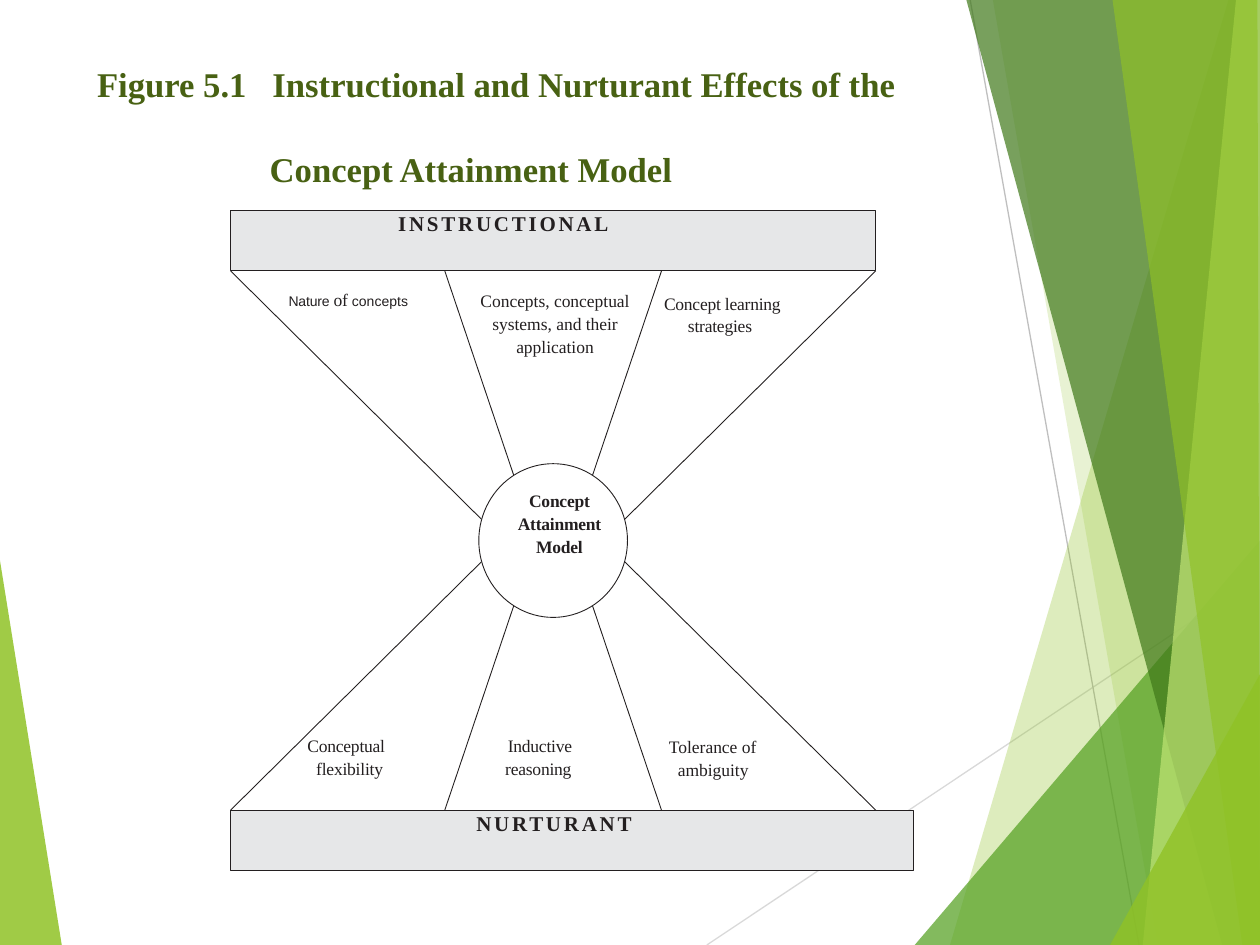
import pptx
import pptx.util
import pptx.dml.color
import pptx.enum.shapes
import pptx.enum.text
import pptx.oxml.ns
from lxml import etree

Inches, Pt = pptx.util.Inches, pptx.util.Pt
SHAPE = pptx.enum.shapes.MSO_SHAPE
ALIGN = pptx.enum.text.PP_ALIGN
qn = pptx.oxml.ns.qn
INK, SERIF = "231F20", "Times New Roman"


def paint(target, color, alpha=100):
    """Colour a fill or line fill, with opacity in percent."""
    target.solid()
    target.fore_color.rgb = pptx.dml.color.RGBColor.from_string(color)
    if alpha < 100:
        node = target._xPr.find(qn("a:solidFill"))[0]
        etree.SubElement(node, qn("a:alpha")).set("val", str(alpha * 1000))


def style(run, size, font=SERIF, color=INK, bold=False, space=0):
    run.font.size, run.font.name, run.font.bold = Pt(size), font, bold
    paint(run.font.fill, color)
    if space:
        run._r.get_or_add_rPr().set("spc", str(round(space * 100)))


def indent(para, left, first=0):
    props = para._p.get_or_add_pPr()
    props.set("marL", str(Inches(left)))
    props.set("indent", str(Inches(first)))


def inset(frame):
    frame.margin_left = frame.margin_right = 0
    frame.margin_top = frame.margin_bottom = 0
    frame.vertical_anchor = pptx.enum.text.MSO_ANCHOR.TOP
    frame.word_wrap = True


def line(shapes, x1, y1, x2, y2, color, width):
    link = shapes.add_connector(pptx.enum.shapes.MSO_CONNECTOR.STRAIGHT,
                                Inches(x1), Inches(y1), Inches(x2), Inches(y2))
    paint(link.line.fill, color)
    link.line.width = Pt(width)
    etree.SubElement(link.element.spPr, qn("a:effectLst"))


def facet(shapes, points, color, alpha):
    spots = [(Inches(x), Inches(y)) for x, y in points]
    path = shapes.build_freeform(*spots[0])
    path.add_line_segments(spots[1:])
    shape = path.convert_to_shape()
    shape.shadow.inherit = False
    paint(shape.fill, color, alpha)
    shape.line.fill.background()


def decor(shapes, wide, high):
    """Translucent facets along the left and right edges."""
    facet(shapes, [(0, 4.45), (0.49, high), (0, high)], "90C226", 85)
    line(shapes, 5.61, high, wide, 4.57, "D9D9D9", 0.75)
    line(shapes, 7.7, 0, 9.04, high, "BFBFBF", 0.75)
    # Bands: top left, bottom left, top right, colour, opacity
    bands = [(9.75, 7.54, wide, "90C226", 30),
             (7.88, 9.19, wide, "90C226", 20),
             (None, 7.26, 4.29, "54A021", 72),
             (7.67, 9.7, wide, "3F7819", 70),
             (9.81, 9.07, wide, "C0E474", 70),
             (8.83, 9.86, 9.98, "90C226", 65),
             (None, 8.81, 5.35, "90C226", 80)]
    for top, foot, right, color, alpha in bands:
        if top is None:  # corner triangle; right is its height on the edge
            points = [(foot, high), (wide, right), (wide, high)]
        else:
            points = [(top, 0), (foot, high), (wide, high), (right, 0)]
        facet(shapes, points, color, alpha)


def heading(title, x, y, w, h):
    title.left, title.top, title.width, title.height = map(Inches, (x, y, w, h))
    frame = title.text_frame
    frame.text = ("Figure 5.1   Instructional and Nurturant Effects of the\n"
                  "Concept Attainment Model")
    inset(frame)
    frame.auto_size = pptx.enum.text.MSO_AUTO_SIZE.NONE
    frame.margin_left, frame.margin_top = Inches(0.1), Inches(0.08)
    for para in frame.paragraphs:
        para.alignment = ALIGN.LEFT
        style(para.runs[0], 19.8, color="486113", bold=True)
    para.space_before = Pt(24.6)
    indent(para, 1.37)


def bar(shapes, x, y, w, h, text, lead):
    box = shapes.add_shape(SHAPE.RECTANGLE, *map(Inches, (x, y, w, h)))
    box.shadow.inherit = False
    paint(box.fill, "E6E7E8")
    paint(box.line.fill, INK)
    box.line.width = Pt(0.5)
    inset(box.text_frame)
    para = box.text_frame.paragraphs[0]
    para.text = text
    para.alignment = ALIGN.LEFT
    indent(para, lead)
    style(para.runs[0], 12, bold=True, space=1.6)


def label(shapes, x, y, w, h, text, hang=None, bold=False, space=-0.1):
    """Text centred, or left-set when a (left, first) indent is given."""
    box = shapes.add_textbox(*map(Inches, (x, y, w, h)))
    inset(box.text_frame)
    box.text_frame.text = text
    for para in box.text_frame.paragraphs:
        para.line_spacing = 1.08
        para.alignment = ALIGN.LEFT if hang else ALIGN.CENTER
        if hang:
            indent(para, *hang)
        style(para.runs[0], 10, bold=bold, space=space)
    return para


def diagram(shapes, x, y, w, h):
    """Hourglass of effects around a central hub."""
    deep = 0.48
    mid, half = x + w / 2, y + h / 2
    reach = h / 2 - deep
    # Spokes, mirrored in both directions
    for far, near, rise in [(w / 2, 0.57, 0.17), (0.86, 0.31, 0.51)]:
        for across in (-1, 1):
            for down in (-1, 1):
                line(shapes, mid + across * far, half + down * reach,
                     mid + across * near, half + down * rise, INK, 0.5)
    # Hub
    hub = shapes.add_shape(SHAPE.OVAL, Inches(mid - 0.59), Inches(half - 0.61),
                           Inches(1.18), Inches(1.22))
    hub.shadow.inherit = False
    paint(hub.fill, "FFFFFF")
    paint(hub.line.fill, INK)
    hub.line.width = Pt(0.5)
    label(shapes, x + 2.08, y + 2.21, 1.06, 0.84, "Concept Attainment Model",
          bold=True)
    # Instructional effects
    para = label(shapes, x + 0.46, y + 0.62, 1.19, 0.16, "Nature ", (0, 0))
    para.line_spacing = 1
    style(para.runs[0], 8, "Arial")
    for text, size, font in [("of", 10, SERIF), (" concepts", 8, "Arial")]:
        run = para.add_run()
        run.text = text
        style(run, size, font)
    label(shapes, x + 1.87, y + 0.62, 1.41, 0.99,
          "Concepts, conceptual systems, and their\napplication", space=0)
    label(shapes, x + 3.44, y + 0.64, 1.32, 0.78,
          "Concept learning strategies", (0.19, -0.19))
    # Nurturant effects
    label(shapes, x + 0.61, y + 4.15, 1.07, 0.45,
          "Conceptual flexibility", (0.07, -0.07))
    label(shapes, x + 2.18, y + 4.15, 0.92, 0.48,
          "Inductive reasoning", (0, 0.02))
    label(shapes, x + 3.48, y + 4.16, 1, 0.41,
          "Tolerance of ambiguity", (0.07, -0.07), space=0)
    # Bars
    bar(shapes, x, y + h - deep, w + 0.3, deep, "NURTURANT", 1.95)
    bar(shapes, x, y, w, deep, "INSTRUCTIONAL", 1.33)


def main():
    deck = pptx.Presentation()
    deck.slide_width, deck.slide_height = Inches(10), Inches(7.5)
    slide = deck.slides.add_slide(deck.slide_layouts[5])
    decor(slide.shapes, 10, 7.5)
    heading(slide.shapes.title, 0.67, 0.42, 6.94, 0.67)
    diagram(slide.shapes, 1.83, 1.67, 5.12, 5.24)
    deck.save("out.pptx")


if __name__ == "__main__":
    main()
